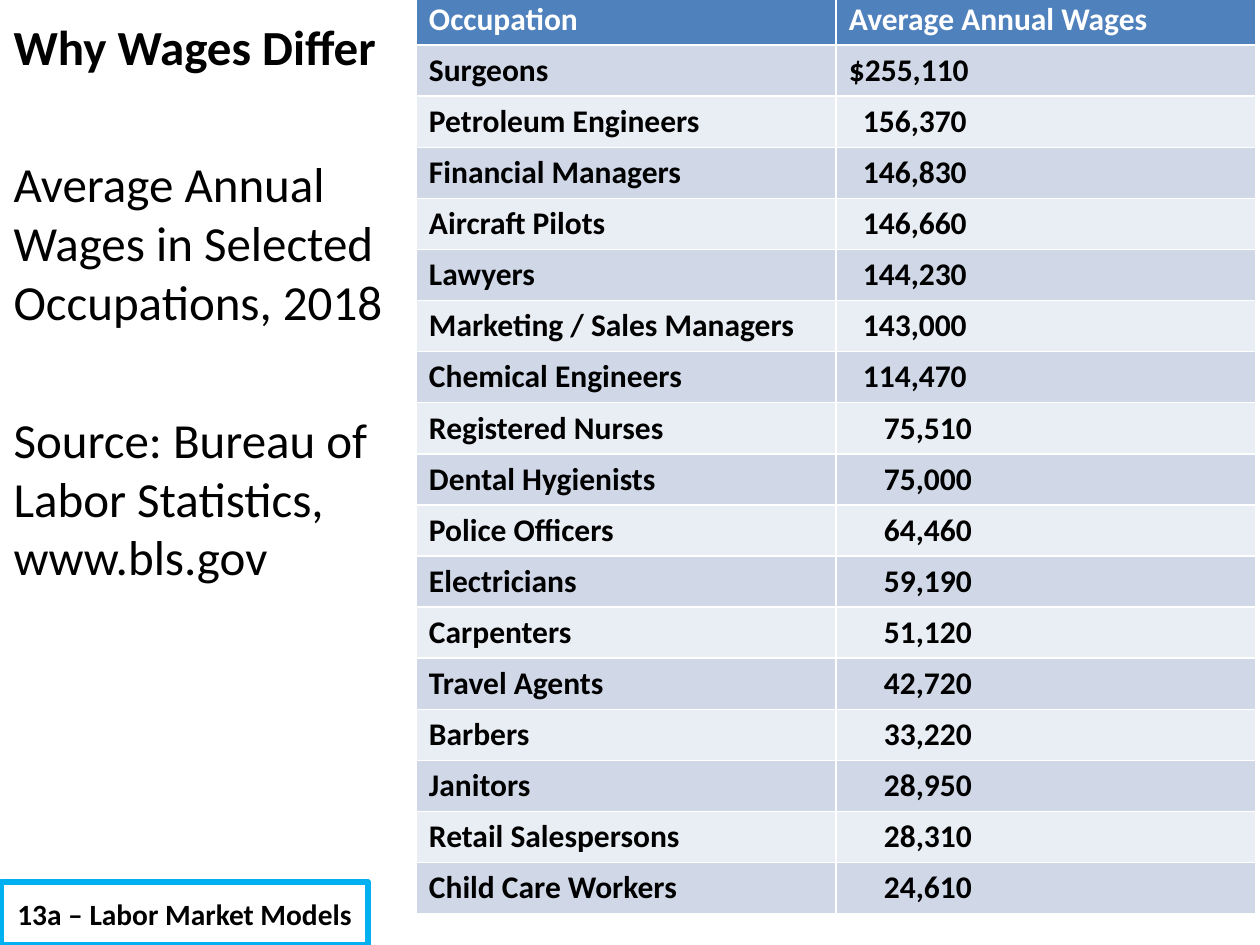
from dataclasses import dataclass

from lxml import etree
from pptx import Presentation
from pptx.dml.color import RGBColor
from pptx.enum.shapes import MSO_SHAPE
from pptx.enum.text import MSO_ANCHOR, MSO_AUTO_SIZE, PP_ALIGN
from pptx.oxml.ns import qn
from pptx.util import Pt

RECTANGLE = MSO_SHAPE.RECTANGLE
MIDDLE, TOP = MSO_ANCHOR.MIDDLE, MSO_ANCHOR.TOP
CENTER, LEFT = PP_ALIGN.CENTER, PP_ALIGN.LEFT
NO_AUTOFIT = MSO_AUTO_SIZE.NONE
EMU_PER_PX = 914400 / 126


@dataclass(frozen=True)
class Theme:
    """Colours, font and type sizes of the slide."""
    font: str = "Calibri"
    ink: str = "000000"
    paper: str = "FFFFFF"
    header: str = "4F81BD"
    bands: tuple = ("D0D8E8", "E9EDF4")
    frame: str = "00B0F0"
    body_size: float = 28
    table_size: float = 18
    label_size: float = 16.8


THEME = Theme()
HEADINGS = ("Occupation", "Average Annual Wages")
WAGES = (
    ("Surgeons", "$255,110"),
    ("Petroleum Engineers", "156,370"),
    ("Financial Managers", "146,830"),
    ("Aircraft Pilots", "146,660"),
    ("Lawyers", "144,230"),
    ("Marketing / Sales Managers", "143,000"),
    ("Chemical Engineers", "114,470"),
    ("Registered Nurses", "75,510"),
    ("Dental Hygienists", "75,000"),
    ("Police Officers", "64,460"),
    ("Electricians", "59,190"),
    ("Carpenters", "51,120"),
    ("Travel Agents", "42,720"),
    ("Barbers", "33,220"),
    ("Janitors", "28,950"),
    ("Retail Salespersons", "28,310"),
    ("Child Care Workers", "24,610"),
)
WAGE_INDENT = {8: 0, 7: 14, 6: 35}
INTRO = (
    ("Why Wages Differ", True, 5.6),
    ("Average Annual Wages in Selected Occupations, 2018", False, 45),
    ("Source: Bureau of Labor Statistics, www.bls.gov", False, 45),
)


def px(length):
    """Turn pixels into EMU."""
    return round(length * EMU_PER_PX)


def color(code):
    """Turn a hex code into a colour."""
    return RGBColor.from_string(code)


def add_span(para, text, size, ink=THEME.ink, bold=True):
    """Add one formatted run to a paragraph."""
    span = para.add_run()
    span.text = text
    span.font.name = THEME.font
    span.font.size = Pt(size)
    span.font.bold = bold
    span.font.color.rgb = color(ink)


def add_label(page, text, left, top, width, height):
    """Add the framed chapter label."""
    box = page.shapes.add_shape(RECTANGLE, px(left), px(top), px(width), px(height))
    box.shadow.inherit = False
    box.fill.background()
    box.line.color.rgb = color(THEME.frame)
    box.line.width = Pt(3)
    frame = box.text_frame
    frame.word_wrap = True
    frame.vertical_anchor = MIDDLE
    para = frame.paragraphs[0]
    para.alignment = CENTER
    add_span(para, text, THEME.label_size)


def fill_cell(cell, text, fill, ink, indent=0):
    """Write one table cell on its band colour."""
    cell.fill.solid()
    cell.fill.fore_color.rgb = color(fill)
    cell.margin_left = px(13 + indent)
    add_span(cell.text_frame.paragraphs[0], text, THEME.table_size, ink)


def add_wage_table(page, left, top, column_width, row_height):
    """Add the table of occupations and wages."""
    rows, columns = len(WAGES) + 1, len(HEADINGS)
    table = page.shapes.add_table(
        rows, columns, px(left), px(top), px(column_width * columns), px(row_height * rows)
    ).table
    for column in table.columns:
        column.width = px(column_width)
    for row in table.rows:
        row.height = px(row_height)
    for index, heading in enumerate(HEADINGS):
        fill_cell(table.cell(0, index), heading, THEME.header, THEME.paper)
    for index, (occupation, wage) in enumerate(WAGES):
        band = THEME.bands[index % 2]
        fill_cell(table.cell(index + 1, 0), occupation, band, THEME.ink)
        fill_cell(table.cell(index + 1, 1), wage, band, THEME.ink, WAGE_INDENT[len(wage)])


def remove_bullet(para):
    """Set a paragraph flush left without a bullet."""
    properties = para._p.get_or_add_pPr()
    properties.set("marL", "0")
    properties.set("indent", "0")
    etree.SubElement(properties, qn("a:buNone"))


def fill_intro(body, left, top, width, height):
    """Place the body placeholder and write the introduction."""
    body.left, body.top, body.width, body.height = map(px, (left, top, width, height))
    frame = body.text_frame
    frame.word_wrap = True
    frame.auto_size = NO_AUTOFIT
    frame.vertical_anchor = TOP
    for index, (text, bold, gap) in enumerate(INTRO):
        para = frame.add_paragraph() if index else frame.paragraphs[0]
        para.alignment = LEFT
        para.space_before = Pt(gap)
        remove_bullet(para)
        add_span(para, text, THEME.body_size, bold=bold)


def main():
    """Build and save the slide."""
    deck = Presentation()
    deck.slide_width, deck.slide_height = px(1260), px(945)
    page = deck.slides.add_slide(deck.slide_layouts[1])
    title, body = page.placeholders
    title.element.getparent().remove(title.element)
    add_label(page, "13a – Labor Market Models", 1, 882, 367, 63)
    add_wage_table(page, 416, -6, 420, 51)
    fill_intro(body, 1, 10, 408, 624)
    deck.save("out.pptx")


if __name__ == "__main__":
    main()
